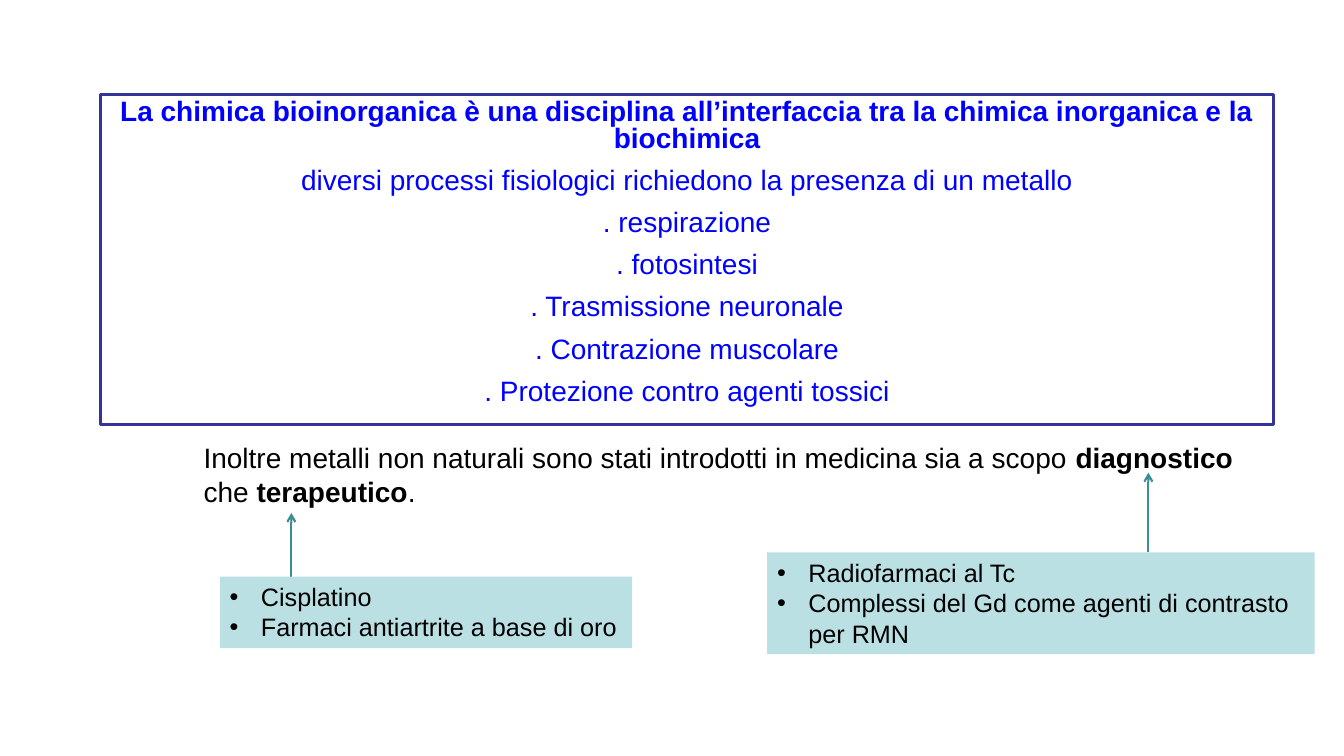
"""Build a slide introducing bioinorganic chemistry and metals in medicine."""
from lxml import etree
from pptx import Presentation
from pptx import util as u
from pptx.dml.color import RGBColor
from pptx.enum import shapes, text
from pptx.oxml.ns import qn


def color(value):
    return RGBColor.from_string(value)


def style(font, size, value, bold=False):
    font.name = "Arial"
    font.size = u.Pt(size)
    font.color.rgb = color(value)
    font.bold = bold


deck = Presentation()
deck.slide_width = u.Inches(13.33)
deck.slide_height = u.Inches(7.5)
page = deck.slides.add_slide(deck.slide_layouts[6])

definition = [
    "La chimica bioinorganica è una disciplina all’interfaccia tra la chimica inorganica e la biochimica",
    "diversi processi fisiologici richiedono la presenza di un metallo",
    ". respirazione",
    ". fotosintesi",
    ". Trasmissione neuronale",
    ". Contrazione muscolare",
    ". Protezione contro agenti tossici",
]
box = page.shapes.add_shape(
    shapes.MSO_SHAPE.RECTANGLE, u.Inches(1), u.Inches(0.94), u.Inches(11.63), u.Inches(3.27))
box.shadow.inherit = False
box.fill.background()
box.line.color.rgb = color("333399")
box.line.width = u.Pt(2)
frame = box.text_frame
frame.word_wrap = True
frame.vertical_anchor = text.MSO_ANCHOR.TOP
frame.text = "\n".join(definition)
for index, para in enumerate(frame.paragraphs):
    para.alignment = text.PP_ALIGN.CENTER
    para.line_spacing = 0.8
    para.space_before = u.Pt(10.9 if index else 0)
    style(para.runs[0].font, 20, "0000FF", bold=index == 0)

box = page.shapes.add_textbox(u.Inches(1.92), u.Inches(4.32), u.Inches(10.58), u.Inches(0.77))
box.text_frame.word_wrap = True
para = box.text_frame.paragraphs[0]
for words, bold in [
    ("Inoltre metalli non naturali sono stati introdotti in medicina sia a scopo ", False),
    ("diagnostico", True),
    (" che ", False),
    ("terapeutico", True),
    (".", False),
]:
    span = para.add_run()
    span.text = words
    style(span.font, 20, "000000", bold)

examples = [
    (7.61, 5.48, 5.43, 1.01, 11.39, 4.69,
     ["Radiofarmaci al Tc", "Complessi del Gd come agenti di contrasto per RMN"]),
    (2.18, 5.72, 4.09, 0.71, 2.89, 5.09,
     ["Cisplatino", "Farmaci antiartrite a base di oro"]),
]
for left, top, width, height, arrow_x, arrow_tip, items in examples:
    arrow = page.shapes.add_connector(
        shapes.MSO_CONNECTOR.STRAIGHT,
        u.Inches(arrow_x), u.Inches(top), u.Inches(arrow_x), u.Inches(arrow_tip))
    arrow.line.color.rgb = color("3C8C93")
    arrow.line.width = u.Pt(1.5)
    etree.SubElement(arrow.line._get_or_add_ln(), qn("a:tailEnd"), type="arrow")
    etree.SubElement(arrow._element.spPr, qn("a:effectLst"))

    box = page.shapes.add_shape(
        shapes.MSO_SHAPE.RECTANGLE, u.Inches(left), u.Inches(top), u.Inches(width), u.Inches(height))
    box.shadow.inherit = False
    box.fill.solid()
    box.fill.fore_color.rgb = color("BBE0E3")
    box.line.fill.background()
    frame = box.text_frame
    frame.word_wrap = True
    frame.vertical_anchor = text.MSO_ANCHOR.TOP
    frame.text = "\n".join(items)
    for para in frame.paragraphs:
        properties = para._p.get_or_add_pPr()
        properties.set("marL", str(u.Inches(0.31)))
        properties.set("indent", str(u.Inches(-0.31)))
        etree.SubElement(properties, qn("a:buFont"), typeface="Arial")
        etree.SubElement(properties, qn("a:buChar"), char="•")
        para.alignment = text.PP_ALIGN.LEFT
        style(para.runs[0].font, 18, "000000")

deck.save("out.pptx")
